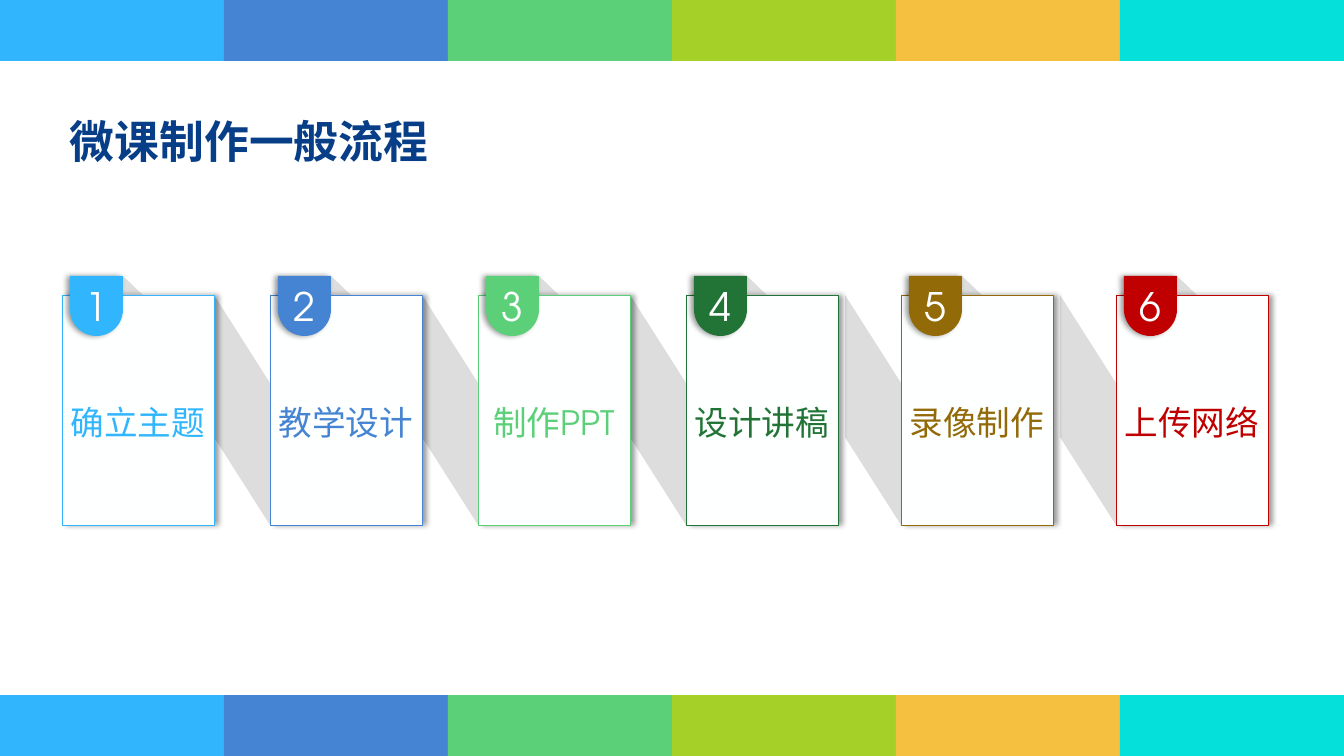
from lxml.etree import SubElement
from pptx import Presentation
from pptx.dml.color import RGBColor
from pptx.enum.shapes import MSO_SHAPE as Preset
from pptx.enum.text import MSO_ANCHOR as Anchor, MSO_AUTO_SIZE as AutoSize, PP_ALIGN as Align
from pptx.oxml.ns import qn
from pptx.util import Emu, Pt

PX = 914400 / 100.8
SLIDE_W, SLIDE_H = 1344, 756
BAND_H = 61

SKY = RGBColor(0x31, 0xB6, 0xFD)
BLUE = RGBColor(0x45, 0x84, 0xD3)
GREEN = RGBColor(0x5B, 0xD0, 0x78)
LIME = RGBColor(0xA5, 0xD0, 0x28)
AMBER = RGBColor(0xF5, 0xC0, 0x40)
AQUA = RGBColor(0x05, 0xE0, 0xDB)
FOREST = RGBColor(0x21, 0x74, 0x36)
BROWN = RGBColor(0x93, 0x6A, 0x08)
RED = RGBColor(0xC0, 0x00, 0x00)
NAVY = RGBColor(0x07, 0x3E, 0x87)
GREY = RGBColor(0xDD, 0xDD, 0xDD)
PAPER = RGBColor(0xFE, 0xFF, 0xFF)

CJK_FONT = "Noto Sans CJK SC"
STEP_FONT = "TeX Gyre Adventor"

BAND_COLOURS = [SKY, BLUE, GREEN, LIME, AMBER, AQUA]
CARD_W, CARD_H, CARD_TOP = 152, 230, 295
RAMP_W, TAB_RISE = 56, 19
STEPS = [  # left edge, label, colour
    (62, "确立主题", SKY),
    (270, "教学设计", BLUE),
    (478, "制作PPT", GREEN),
    (686, "设计讲稿", FOREST),
    (901, "录像制作", BROWN),
    (1116, "上传网络", RED),
]


def px(length):
    return Emu(round(length * PX))


def add_block(slide, preset, box, fill):
    shape = slide.shapes.add_shape(preset, *map(px, box))
    shape.shadow.inherit = False
    shape.fill.solid()
    shape.fill.fore_color.rgb = fill
    shape.line.fill.background()
    return shape


def add_shadow(shape, distance, degrees):
    effects = shape._element.spPr.find(qn("a:effectLst"))
    shadow = SubElement(effects, qn("a:outerShdw"), blurRad=str(Pt(4)),
                        dist=str(Pt(distance)), dir=str(degrees * 60000),
                        algn="ctr", rotWithShape="0")
    colour = SubElement(shadow, qn("a:srgbClr"), val="000000")
    SubElement(colour, qn("a:alpha"), val="40000")


def write(shape, text, colour, font, paragraph_format, frame_format):
    frame = shape.text_frame
    for name, value in frame_format.items():
        setattr(frame, name, value)
    paragraph = frame.paragraphs[0]
    for name, value in paragraph_format.items():
        setattr(paragraph, name, value)
    run = paragraph.add_run()
    run.text = text
    for name, value in font.items():
        setattr(run.font, name, value)
    run.font.color.rgb = colour
    SubElement(run.font._element, qn("a:ea"), typeface=CJK_FONT)


def add_band(slide, left, top, width, height):
    cell = width / len(BAND_COLOURS)
    for index, colour in enumerate(BAND_COLOURS):
        add_block(slide, Preset.RECTANGLE, (left + index * cell, top, cell, height), colour)


def add_title(slide, left, top, width, height):
    box = slide.shapes.add_textbox(*map(px, (left, top, width, height)))
    write(box, "微课制作一般流程", NAVY,
          {"name": CJK_FONT, "size": Pt(32), "bold": True}, {},
          {"word_wrap": True, "auto_size": AutoSize.SHAPE_TO_FIT_TEXT})


def add_ramp(slide, left, top, width, height):
    # The parallelogram lies flat, then turns about its centre to stand upright
    flat = (left + (width - height) / 2, top + (height - width) / 2, height, width)
    ramp = add_block(slide, Preset.PARALLELOGRAM, flat, GREY)
    ramp.adjustments[0] = 1.57
    ramp.rotation = 270


def add_step(slide, left, top, width, height, number, label, colour):
    tab_top = top - TAB_RISE

    # Fold behind the number tab
    add_block(slide, Preset.RIGHT_TRIANGLE, (left + 61, tab_top, 20, TAB_RISE), GREY)

    # Card
    card = add_block(slide, Preset.RECTANGLE, (left, top, width, height), PAPER)
    card.line.color.rgb = colour
    card.line.width = Pt(0.25)
    add_shadow(card, 3, 0)
    write(card, label, colour, {"name": STEP_FONT, "size": Pt(24)},
          {"alignment": Align.CENTER, "line_spacing": 1.2},
          {"word_wrap": True, "vertical_anchor": Anchor.MIDDLE, "margin_left": px(8),
           "margin_top": px(16), "margin_right": px(8), "margin_bottom": 0})

    # Number tab, rounded at the bottom only
    tab = add_block(slide, Preset.ROUND_2_SAME_RECTANGLE, (left + 8, tab_top, 53, 60), colour)
    tab.adjustments[0], tab.adjustments[1] = 0, 0.5
    add_shadow(tab, 2, 180)
    write(tab, str(number), PAPER, {"name": STEP_FONT, "size": Pt(28)},
          {"alignment": Align.CENTER},
          {"word_wrap": False, "vertical_anchor": Anchor.MIDDLE, "margin_left": 0,
           "margin_top": px(8), "margin_right": 0, "margin_bottom": 0})


def add_process(slide, top, width, height):
    for left, _, _ in STEPS[1:]:
        add_ramp(slide, left - RAMP_W, top, RAMP_W, height)
    for number, (left, label, colour) in enumerate(STEPS, start=1):
        add_step(slide, left, top, width, height, number, label, colour)


def main():
    presentation = Presentation()
    presentation.slide_width, presentation.slide_height = px(SLIDE_W), px(SLIDE_H)
    slide = presentation.slides.add_slide(presentation.slide_layouts[6])
    for top in (0, SLIDE_H - BAND_H):
        add_band(slide, 0, top, SLIDE_W, BAND_H)
    add_title(slide, 60, 109, 473, 64)
    add_process(slide, CARD_TOP, CARD_W, CARD_H)
    presentation.save("out.pptx")


if __name__ == "__main__":
    main()
